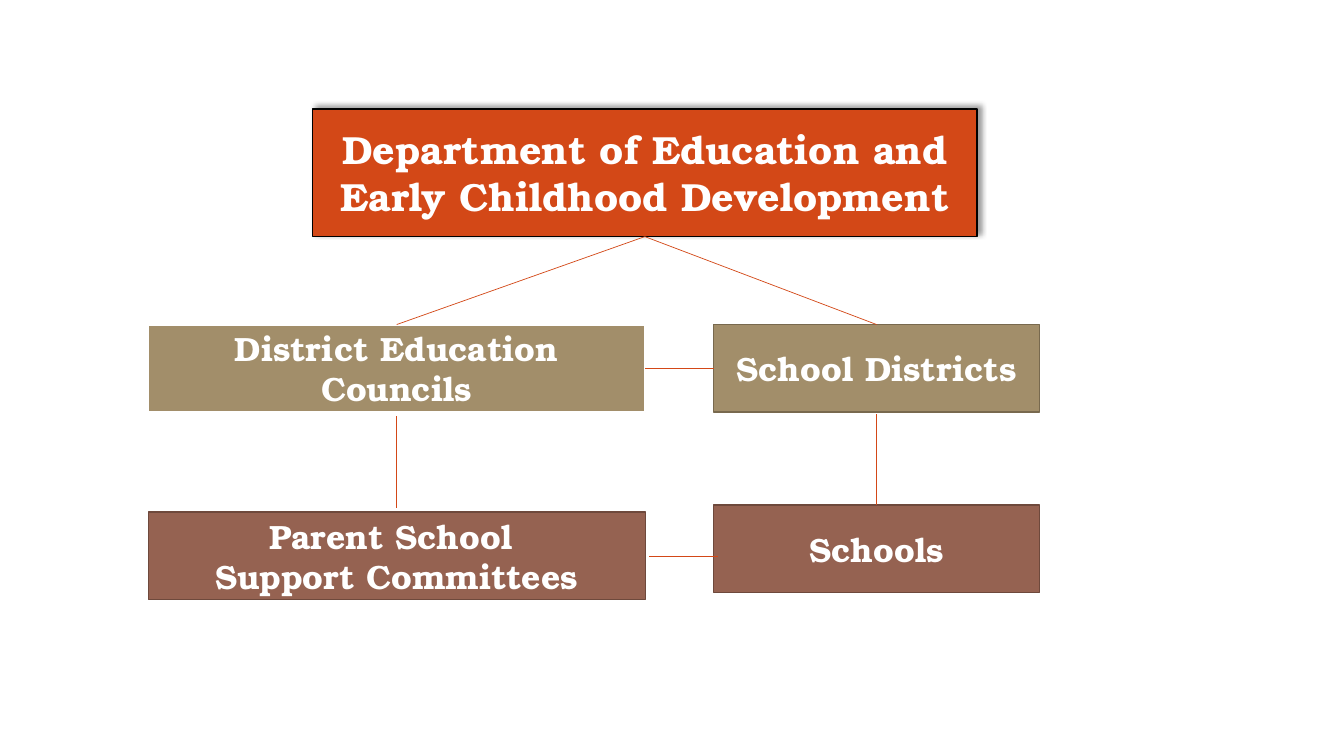
from lxml.etree import SubElement
from pptx import Presentation
from pptx.dml.color import RGBColor
from pptx.enum.shapes import MSO_CONNECTOR, MSO_SHAPE
from pptx.enum.text import MSO_ANCHOR, PP_ALIGN
from pptx.oxml.ns import qn
from pptx.util import Inches, Pt

WHITE = RGBColor(0xFF, 0xFF, 0xFF)
BLACK = RGBColor(0x00, 0x00, 0x00)
ORANGE = RGBColor(0xD3, 0x48, 0x17)
TAN = RGBColor(0xA2, 0x8E, 0x6A)
DARK_TAN = RGBColor(0x78, 0x69, 0x4E)
BROWN = RGBColor(0x95, 0x62, 0x51)
DARK_BROWN = RGBColor(0x6E, 0x49, 0x3C)

FONT = "TeX Gyre Bonum"
WIDTH, HEIGHT = Inches(13.33), Inches(7.5)
COUNCIL_COLUMN = (11.03, 36.98)
SCHOOL_COLUMN = (53.11, 24.23)
ROW_HEIGHT = 11.6


def across(percent):
    """Return a share of the slide width."""
    return round(WIDTH * percent / 100)


def down(percent):
    """Return a share of the slide height."""
    return round(HEIGHT * percent / 100)


def add_unit(slide, box, lines, fill, outline, size=24, weight=1):
    """Draw one organisation box, given as percent shares of the slide."""
    left, top, width, height = box
    unit = slide.shapes.add_shape(MSO_SHAPE.RECTANGLE, across(left), down(top),
                                  across(width), down(height))
    unit.shadow.inherit = False
    unit.fill.solid()
    unit.fill.fore_color.rgb = fill
    unit.line.color.rgb = outline
    unit.line.width = Pt(weight)
    frame = unit.text_frame
    frame.word_wrap = True
    frame.vertical_anchor = MSO_ANCHOR.MIDDLE
    for index, line in enumerate(lines):
        paragraph = frame.add_paragraph() if index else frame.paragraphs[0]
        paragraph.text = line
        paragraph.alignment = PP_ALIGN.CENTER
        paragraph.font.name = FONT
        paragraph.font.size = Pt(size)
        paragraph.font.bold = True
        paragraph.font.color.rgb = WHITE
    return unit


def cast_shadow(unit):
    """Give a box a soft shadow towards the upper right."""
    effects = unit.element.spPr.find(qn("a:effectLst"))
    shadow = SubElement(effects, qn("a:outerShdw"), blurRad=str(Pt(4)),
                        dist=str(Pt(3)), dir=str(315 * 60000), rotWithShape="0")
    colour = SubElement(shadow, qn("a:srgbClr"), val=str(BLACK))
    SubElement(colour, qn("a:alpha"), val="40000")


def add_link(slide, start, end):
    """Draw a thin line between two points."""
    link = slide.shapes.add_connector(MSO_CONNECTOR.STRAIGHT, *start, *end)
    link.line.color.rgb = ORANGE
    link.line.width = Pt(0.5)
    SubElement(link.element.spPr, qn("a:effectLst"))


def top_of(unit, gap=0):
    """Return the point a gap above the middle of the top edge."""
    return unit.left + unit.width // 2, unit.top - down(gap)


def bottom_of(unit, gap=0):
    """Return the point a gap below the middle of the bottom edge."""
    return unit.left + unit.width // 2, unit.top + unit.height + down(gap)


def link_across(slide, council, school, shift=0):
    """Join a council to the school box on its right."""
    middle = council.top + council.height // 2
    add_link(slide, (school.left + across(shift), middle),
             (council.left + council.width + across(shift), middle))


def add_organisation(slide):
    """Place the five bodies and the lines that join them."""
    def place(column, top):
        return column[0], top, column[1], ROW_HEIGHT

    department = add_unit(
        slide, (23.26, 14.4, 49.44, 16.9),
        ["Department of Education and Early Childhood Development"],
        ORANGE, BLACK, size=28)
    cast_shadow(department)
    districts = add_unit(slide, place(SCHOOL_COLUMN, 42.93),
                         ["School Districts"], TAN, DARK_TAN)
    schools = add_unit(slide, place(SCHOOL_COLUMN, 66.8),
                       ["Schools"], BROWN, DARK_BROWN)
    councils = add_unit(slide, place(COUNCIL_COLUMN, 42.93),
                        ["District Education Councils"], TAN, WHITE, weight=1.5)
    committees = add_unit(slide, place(COUNCIL_COLUMN, 67.73),
                          ["Parent School ", "Support Committees"],
                          BROWN, DARK_BROWN)

    add_link(slide, bottom_of(districts, 0.25), top_of(schools))
    add_link(slide, bottom_of(councils, 0.5), top_of(committees, 0.5))
    link_across(slide, councils, districts)
    link_across(slide, committees, schools, shift=0.3)
    for body in (councils, districts):
        add_link(slide, top_of(body), bottom_of(department))


def main():
    """Build and save the slide."""
    deck = Presentation()
    deck.slide_width, deck.slide_height = WIDTH, HEIGHT
    add_organisation(deck.slides.add_slide(deck.slide_layouts[6]))
    deck.save("out.pptx")


if __name__ == "__main__":
    main()
